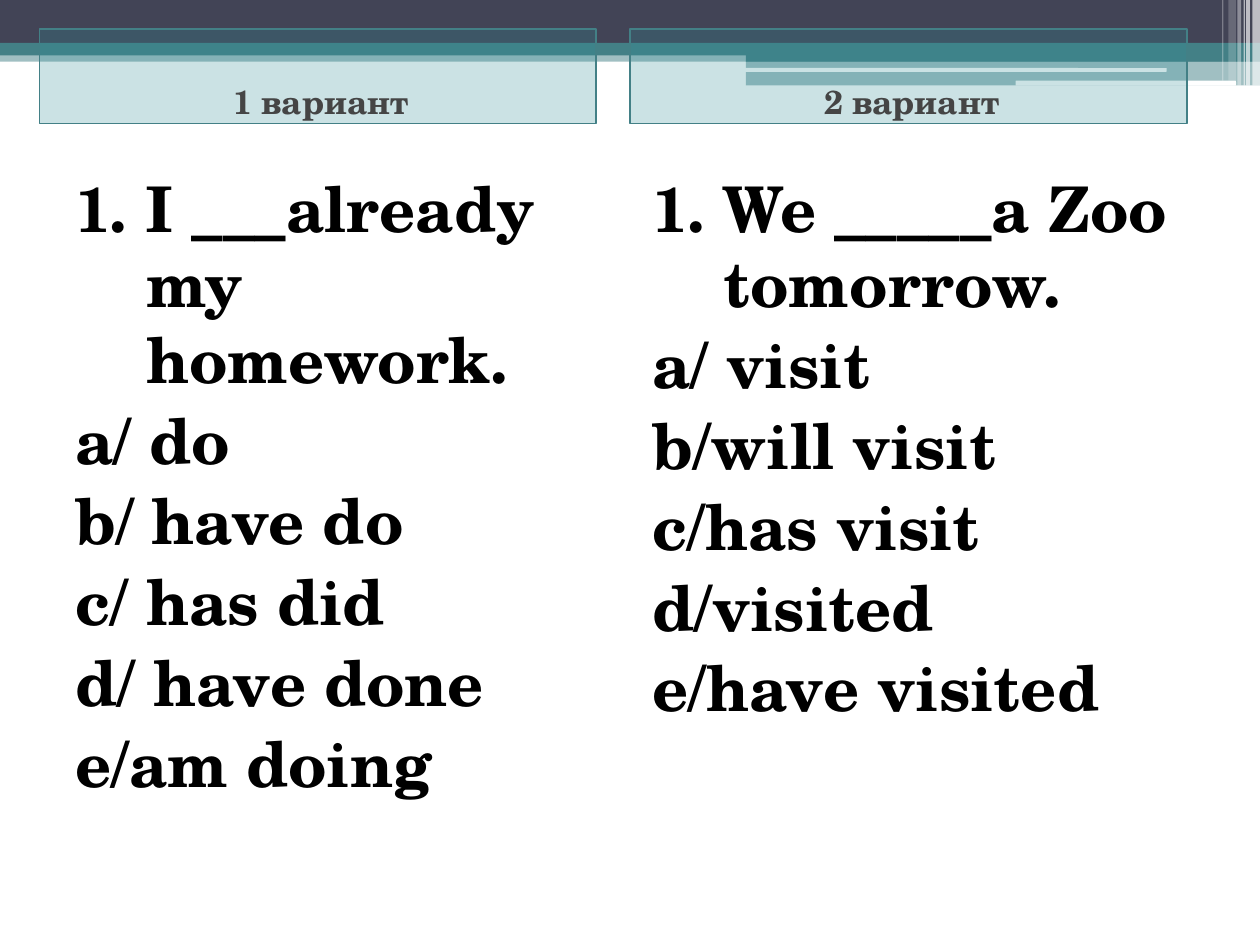
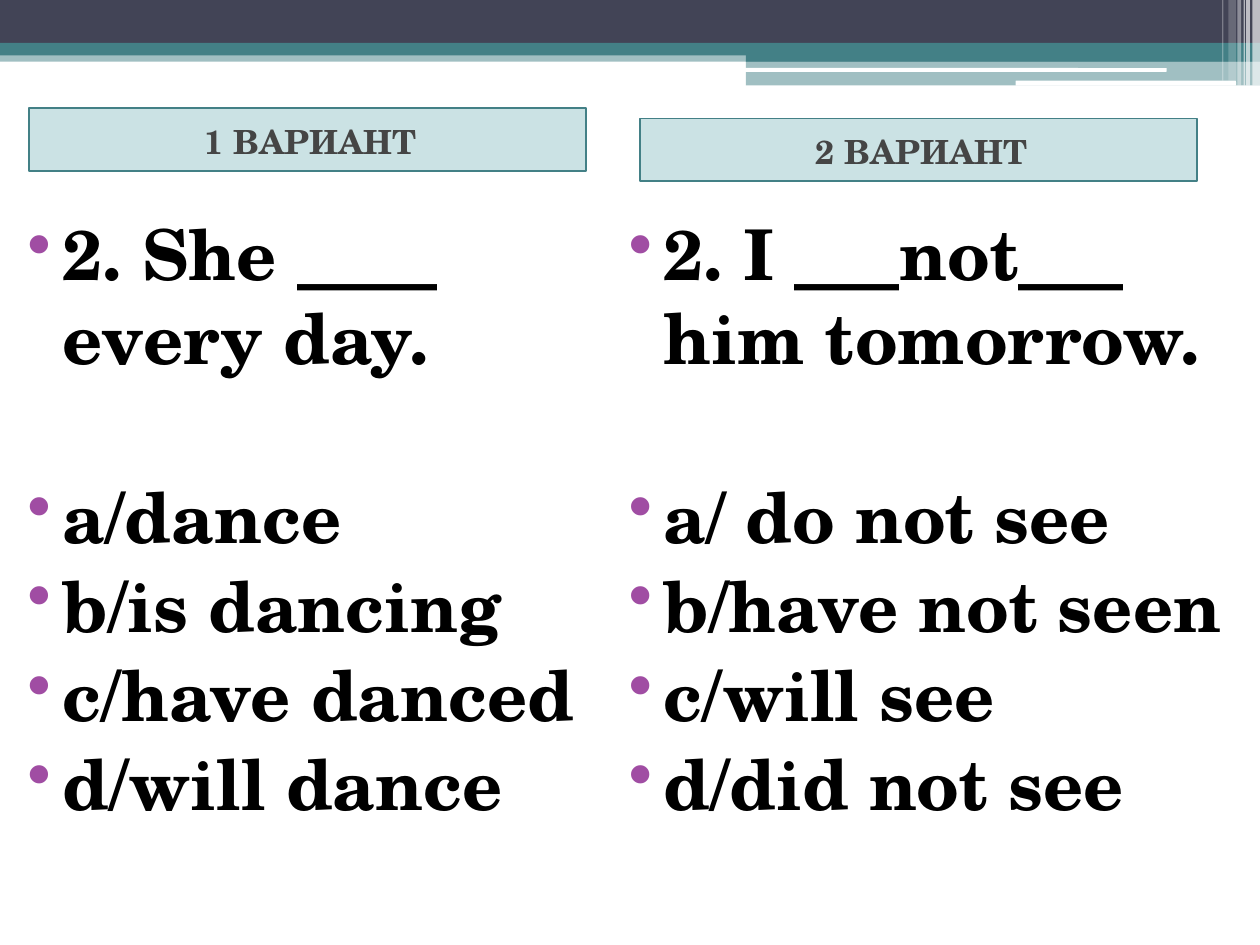
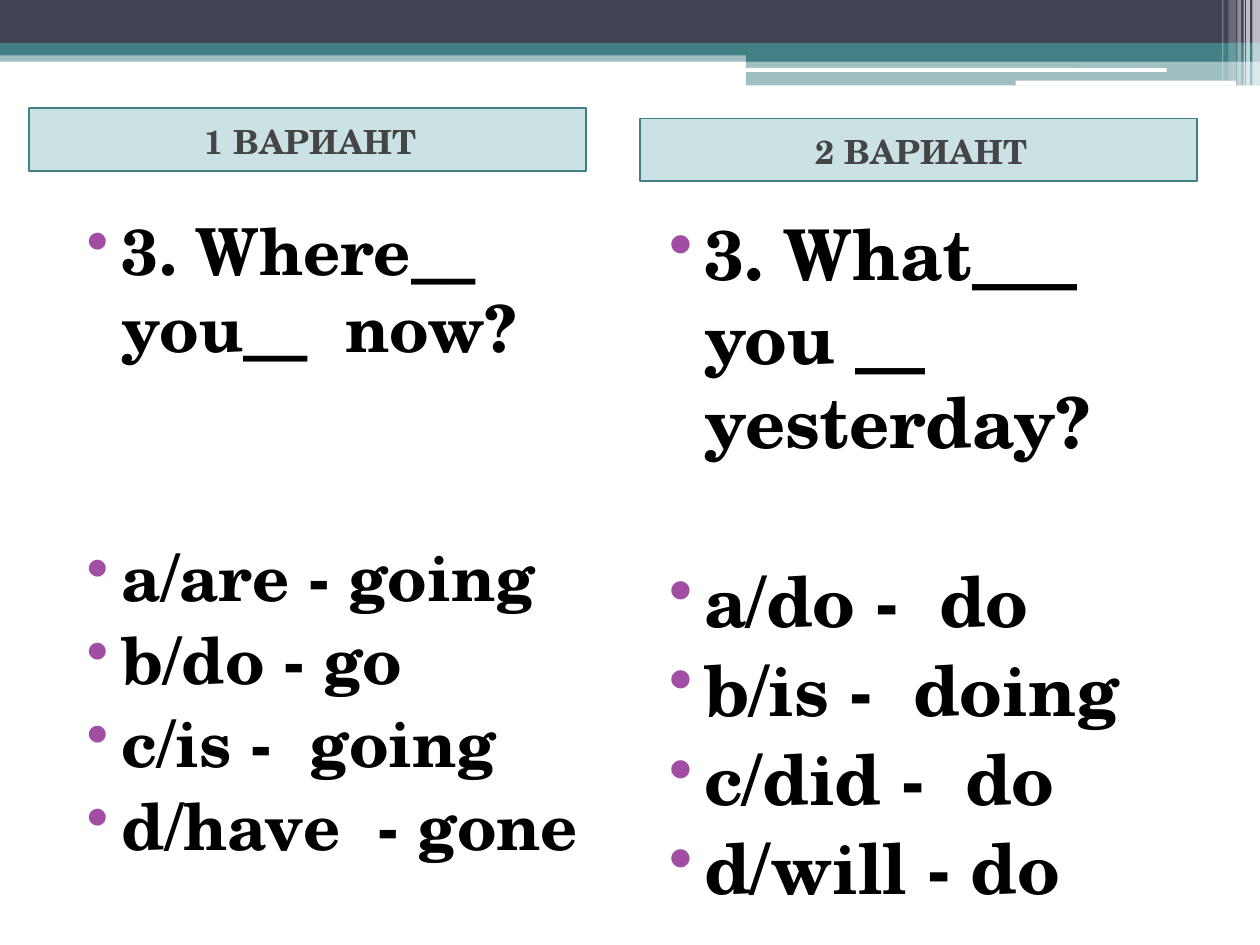
from lxml.etree import SubElement
from pptx import Presentation
from pptx.dml.color import RGBColor
from pptx.enum.shapes import MSO_SHAPE
from pptx.enum.text import MSO_ANCHOR, PP_ALIGN
from pptx.oxml.ns import qn
from pptx.util import Pt

FONT = "TeX Gyre Schola"
SLATE = RGBColor(0x42, 0x44, 0x56)
TEAL = RGBColor(0x43, 0x80, 0x86)
HEADER_TEAL = RGBColor(0x32, 0x8E, 0x97)
WHITE = RGBColor(0xFF, 0xFF, 0xFF)
BLACK = RGBColor(0, 0, 0)
GREY = RGBColor(0x45, 0x45, 0x45)
BULLET_PURPLE = "A04DA3"

SPACING = 3
LINE_HEIGHT = 1.2
HEADER_WIDTH = 318.24
HEADER_FORMAT = {"name": FONT, "size": Pt(19), "bold": True}

# left, top, width, height, colour, opacity in percent
BANDS = [
    (0, 28.8, 720, 6.48, TEAL, 50),
    (0, 0, 720, 24.48, SLATE, 100),
    (0, 24.48, 720, 7.2, TEAL, 100),
    (426.24, 28.08, 293.76, 7.2, TEAL, 100),
    (426.24, 34.7, 293.76, 14.1, TEAL, 50),
]
GROOVES = [
    (425.52, 38.88, 241.2, 2.16, WHITE, 100),
    (580.32, 46.08, 126, 2.88, WHITE, 100),
]
# left, width, height, opacity in percent
STRIPES = [
    (715.68, 4.32, 48.96, 65),
    (712.08, 2.16, 48.96, 65),
    (710.64, 0.72, 48.96, 60),
    (707.04, 2.16, 48.96, 40),
    (702, 4.32, 46.08, 20),
    (698.4, 0.72, 46.08, 30),
]

TALL_HEADERS = [
    ("1 вариант", 22.5, 16.56, 54),
    ("2 вариант", 360, 16.56, 54),
]
LOW_HEADERS = [
    ("1 ВАРИАНТ", 16.56, 61.92, 36),
    ("2 ВАРИАНТ", 365.76, 67.68, 36),
]

# Each column: bounds, text size, empty lines after the question, lines
PAGES = [
    (TALL_HEADERS, False, [
        ((36, 90, 318.24, 396), 36, 0,
         ["1. I ___already my homework.", "a/ do", "b/ have do",
          "c/ has did", "d/ have done", "e/am doing"]),
        ((365.76, 90, 318.24, 396), 36, 0,
         ["1. We _____a Zoo tomorrow.", "a/ visit", "b/will visit",
          "c/has visit", "d/visited", "e/have visited"]),
    ]),
    (LOW_HEADERS, True, [
        ((0, 113.76, 357.12, 398.16), 40, 1,
         ["2. She ____ every day.", "a/dance", "b/is dancing",
          "c/have danced", "d/will dance"]),
        ((343.44, 113.76, 376.56, 370.08), 40, 1,
         ["2. I ___not___ him tomorrow.", "a/ do not see",
          "b/have not seen", "c/will see", "d/did not see"]),
    ]),
    (LOW_HEADERS, True, [
        ((33.84, 113.76, 324, 398.16), 37, 2,
         ["3. Where__ you__  now?", "a/are - going", "b/do - go",
          "c/is -  going", "d/have  - gone"]),
        ((366.48, 113.76, 309.6, 408.96), 40, 1,
         ["3. What___ you __  yesterday?", "a/do -  do",
          "b/is -  doing", "c/did -  do", "d/will - do"]),
    ]),
]


def set_all(target, formats):
    for name, value in formats.items():
        setattr(target, name, value)


def add_block(page, left, top, width, height, color, opacity=100,
              kind=MSO_SHAPE.RECTANGLE):
    """Add a borderless filled shape."""
    block = page.shapes.add_shape(kind, Pt(left), Pt(top), Pt(width), Pt(height))
    block.shadow.inherit = False
    block.fill.solid()
    block.fill.fore_color.rgb = color
    block.line.fill.background()
    if opacity < 100:
        fill_color = next(block.element.spPr.iter(qn("a:srgbClr")))
        SubElement(fill_color, qn("a:alpha"), val=str(opacity * 1000))
    return block


def add_span(para, text, color, formats):
    span = para.add_run()
    span.text = text
    set_all(span.font, formats)
    span.font.color.rgb = color


def add_indent(para, left, hanging, bulleted):
    properties = para._p.get_or_add_pPr()
    properties.set("marL", str(Pt(left)))
    properties.set("indent", str(-Pt(hanging)))
    if bulleted:
        bullet_color = SubElement(properties, qn("a:buClr"))
        SubElement(bullet_color, qn("a:srgbClr"), val=BULLET_PURPLE)
        SubElement(properties, qn("a:buChar"), char="•")
    else:
        SubElement(properties, qn("a:buNone"))


def move_bands_to_layout(page):
    """Draw the top decoration and keep it on the layout all pages share."""
    blocks = [add_block(page, *band) for band in BANDS]
    blocks += [add_block(page, *groove, kind=MSO_SHAPE.ROUNDED_RECTANGLE)
               for groove in GROOVES]
    blocks += [add_block(page, left, 0, width, height, WHITE, opacity)
               for left, width, height, opacity in STRIPES]
    for block in blocks:
        page.slide_layout.shapes.element.append(block.element)


def add_header(page, text, left, top, height):
    box = add_block(page, left, top, HEADER_WIDTH, height, HEADER_TEAL, 25)
    box.line.color.rgb = TEAL
    box.line.width = Pt(1)
    tall = height > 36
    set_all(box.text_frame, {
        "word_wrap": True,
        "vertical_anchor": MSO_ANCHOR.BOTTOM if tall else MSO_ANCHOR.MIDDLE,
        "margin_top": Pt(3.6),
        "margin_bottom": Pt(1.5 if tall else 2),
    })
    para = box.text_frame.paragraphs[0]
    add_indent(para, 3.6, 0, False)
    para.alignment = PP_ALIGN.CENTER
    add_span(para, text, GREY, HEADER_FORMAT)


def add_question(page, bounds, size, empty_lines, lines, bulleted):
    box = page.shapes.add_textbox(*map(Pt, bounds))
    frame = box.text_frame
    set_all(frame, {"word_wrap": True, "margin_top": Pt(3.6 + SPACING)})
    answer_gap = SPACING + empty_lines * (size * LINE_HEIGHT + SPACING)
    for index, line in enumerate(lines):
        para = frame.add_paragraph() if index else frame.paragraphs[0]
        if bulleted:
            add_indent(para, 28.8, 20.16, True)
        else:
            add_indent(para, 40.5, 40.5, False)
        if index:
            para.space_before = Pt(answer_gap if index == 1 else SPACING)
        add_span(para, line, BLACK, {"name": FONT, "size": Pt(size), "bold": True})


def main():
    deck = Presentation()
    deck.slide_width, deck.slide_height = Pt(720), Pt(540)
    blank_layout = deck.slide_layouts[6]
    for number, (headers, bulleted, columns) in enumerate(PAGES):
        page = deck.slides.add_slide(blank_layout)
        if number == 0:
            move_bands_to_layout(page)
        for header in headers:
            add_header(page, *header)
        for column in columns:
            add_question(page, *column, bulleted)
    deck.save("out.pptx")


if __name__ == "__main__":
    main()
